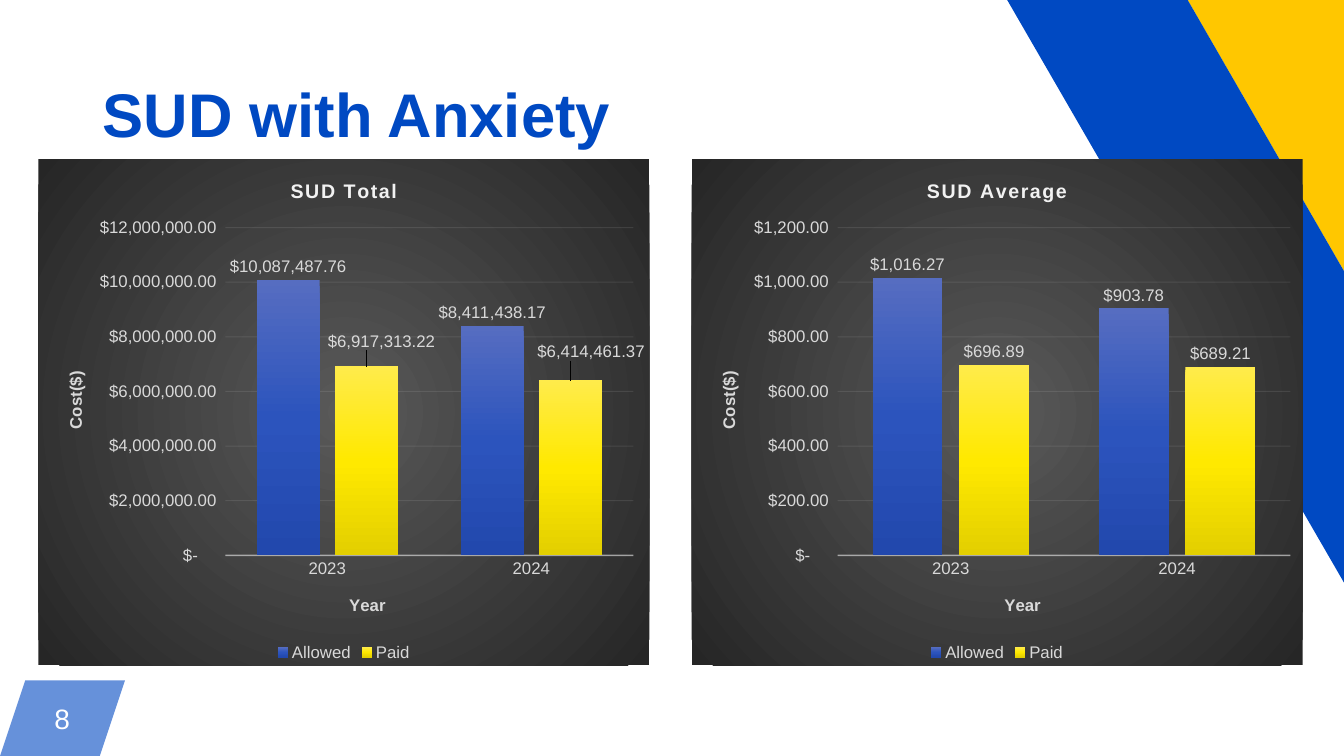
from dataclasses import dataclass

from lxml.etree import SubElement
from pptx import Presentation
from pptx.chart.data import CategoryChartData
from pptx.dml.color import RGBColor
from pptx.enum.chart import XL_CHART_TYPE as ChartKind
from pptx.enum.chart import XL_LABEL_POSITION as LabelPosition
from pptx.enum.chart import XL_LEGEND_POSITION as LegendPosition
from pptx.enum.chart import XL_TICK_MARK as TickMark
from pptx.enum.text import MSO_ANCHOR as Anchor
from pptx.enum.text import PP_ALIGN as Align
from pptx.oxml import parse_xml
from pptx.oxml.ns import nsdecls, qn
from pptx.util import Inches, Pt

WIDTH, HEIGHT = Inches(13.33), Inches(7.5)
FONT, BLUE, YELLOW, WHITE = "Arial", "0049C2", "FFC700", "FFFFFF"
PALE, GREY = "F2F2F2", "D9D9D9"
DOLLARS = '"$"#,##0.00'
ACCOUNTING = r'_("$"* #,##0.00_);_("$"* \(#,##0.00\);_("$"* "-"??_);_(@_)'
LINEAR = '<a:lin ang="5400000" scaled="0"/>'
RADIAL = ('<a:path path="circle"><a:fillToRect l="50000" t="50000" '
          'r="50000" b="50000"/></a:path>')


@dataclass(frozen=True)
class Frame:
    left: float
    top: float
    width: float
    height: float


@dataclass(frozen=True)
class Band:
    points: tuple
    color: str
    opacity: int = 100


@dataclass(frozen=True)
class Series:
    name: str
    values: tuple
    stops: tuple
    shifts: tuple = ()


@dataclass(frozen=True)
class CostChart:
    title: str
    left: float
    top_value: int
    plot: tuple
    year_left: float
    series: tuple


BLUES = ((0, "566DC1"), (50, "2C54BD"), (100, "2248AD"))
YELLOWS = ((0, "FFEB4B"), (50, "FFE900"), (100, "E3CF00"))
BANDS = (
    Band(((1.88, 90), (9.3, 90), (7.43, 100), (0, 100)), BLUE, 60),
    Band(((88.37, 0), (100, 0), (100, 35.87)), YELLOW),
    Band(((74.94, 0), (88.37, 0), (100, 35.87), (100, 77.07)), BLUE),
)
CHARTS = (
    CostChart("SUD Total", 2.85, 12_000_000, (0.306, 0.135, 0.668, 0.648), 0.504, (
        Series("Allowed", (10087487.76, 8411438.17), BLUES),
        Series("Paid", (6917313.22, 6414461.37), YELLOWS,
               ((0.025, -0.024), (0.034, -0.03))))),
    CostChart("SUD Average", 51.46, 1200, (0.239, 0.135, 0.741, 0.648), 0.507, (
        Series("Allowed", (1016.27, 903.78), BLUES),
        Series("Paid", (696.89, 689.21), YELLOWS))),
)


def across(share: float) -> int:
    return round(WIDTH * share / 100)


def down(share: float) -> int:
    return round(HEIGHT * share / 100)


def bounds(frame: Frame) -> tuple:
    return (across(frame.left), down(frame.top),
            across(frame.width), down(frame.height))


def paint(color, value: str, opacity: int = 100) -> None:
    color.rgb = RGBColor.from_string(value)
    if opacity < 100:
        for node in color._xFill.iter(qn("a:srgbClr")):
            SubElement(node, qn("a:alpha")).set("val", str(opacity * 1000))


def style(font, size: float, color: str, bold: bool = False) -> None:
    font.name, font.size, font.bold = FONT, Pt(size), bold
    paint(font.color, color)


def write(frame, text: str, *, size: float, color: str, bold: bool = False,
          align=None, spacing: int = 0) -> None:
    para = frame.paragraphs[0]
    para.alignment = align
    span = para.add_run()
    span.text = text
    style(span.font, size, color, bold)
    if spacing:
        span._r.get_or_add_rPr().set("spc", str(spacing))


def add_text(page, frame: Frame, text: str, inset: float, **form) -> None:
    box = page.shapes.add_textbox(*bounds(frame)).text_frame
    box.word_wrap, box.vertical_anchor = True, Anchor.MIDDLE
    box.margin_left = box.margin_right = Inches(inset)
    box.margin_top = box.margin_bottom = Inches(0.04)
    write(box, text, **form)


def add_band(page, band: Band) -> None:
    first, *rest = [(across(x), down(y)) for x, y in band.points]
    builder = page.shapes.build_freeform(*first)
    builder.add_line_segments(rest, close=True)
    shape = builder.convert_to_shape()
    shape.shadow.inherit = False
    shape.fill.solid()
    paint(shape.fill.fore_color, band.color, band.opacity)
    shape.line.fill.background()


def gradient(stops: tuple, direction: str) -> str:
    marks = "".join(f'<a:gs pos="{at * 1000}"><a:srgbClr val="{color}"/></a:gs>'
                    for at, color in stops)
    return (f'<a:gradFill {nsdecls("a")} rotWithShape="1"><a:gsLst>{marks}'
            f'</a:gsLst>{direction}</a:gradFill>')


def place(parent, index: int, x: float, y: float, size: tuple = (),
          edge: bool = True) -> None:
    for old in parent.findall(qn("c:layout")):
        parent.remove(old)
    layout = parse_xml(f'<c:layout {nsdecls("c")}/>')
    manual = SubElement(layout, qn("c:manualLayout"))
    entries = [("layoutTarget", "inner")] if size else []
    if edge:
        entries += [("xMode", "edge"), ("yMode", "edge")]
    entries += [("x", x), ("y", y), *zip("wh", size)]
    for tag, value in entries:
        SubElement(manual, qn(f"c:{tag}")).set("val", str(value))
    parent.insert(index, layout)


def style_axis(axis, title: str, x: float, y: float) -> None:
    axis.major_tick_mark = axis.minor_tick_mark = TickMark.NONE
    style(axis.tick_labels.font, 12, GREY)
    write(axis.axis_title.text_frame, title, size=12, color=GREY, bold=True)
    place(axis.axis_title._element, 1, x, y)


def style_line(line, width: float, opacity: int) -> None:
    line.width = Pt(width)
    line.fill.solid()
    paint(line.fill.fore_color, PALE, opacity)


def style_series(bars, series: Series) -> None:
    bars.format.line.fill.background()
    bars.format._element.spPr.insert(0, parse_xml(gradient(series.stops, LINEAR))) \
        if hasattr(bars.format._element, "spPr") else None
    labels = bars.data_labels
    labels.show_value, labels.position = True, LabelPosition.OUTSIDE_END
    labels.number_format, labels.number_format_is_linked = DOLLARS, False
    style(labels.font, 12, GREY)
    for index in range(len(series.shifts)):
        label = bars.points[index].data_label
        label.position = LabelPosition.OUTSIDE_END
        style(label.font, 12, GREY)
    for node, shift in zip(bars._element.iter(qn("c:dLbl")), series.shifts):
        place(node, 1, *shift, edge=False)


def add_cost_chart(page, cost: CostChart) -> None:
    data = CategoryChartData(number_format=DOLLARS)
    data.categories = ["2023", "2024"]
    for series in cost.series:
        data.add_series(series.name, series.values)
    frame = Frame(cost.left, 21.07, 45.46, 66.93)
    chart = page.shapes.add_chart(ChartKind.COLUMN_CLUSTERED, *bounds(frame), data).chart
    style(chart.font, 12, GREY)
    write(chart.chart_title.text_frame, cost.title, size=14, color=PALE,
          bold=True, spacing=100)
    chart.has_legend = True
    chart.legend.position, chart.legend.include_in_layout = LegendPosition.BOTTOM, False
    style(chart.legend.font, 12, GREY)
    years, costs = chart.category_axis, chart.value_axis
    style_axis(years, "Year", cost.year_left, 0.854)
    style_line(years.format.line, 1, 54)
    style_axis(costs, "Cost($)", 0.039, 0.413)
    costs.axis_title.text_frame._txBody.bodyPr.set("rot", "-5400000")
    costs.format.line.fill.background()
    style_line(costs.major_gridlines.format.line, 0.75, 10)
    costs.minimum_scale, costs.maximum_scale = 0, cost.top_value
    costs.major_unit = cost.top_value / 6
    costs.tick_labels.number_format = ACCOUNTING
    costs.tick_labels.number_format_is_linked = False
    plot = chart.plots[0]
    plot.gap_width, plot.overlap, plot.vary_by_categories = 100, -24, False
    for bars, series in zip(plot.series, cost.series):
        style_series(bars, series)
    root = chart._chartSpace
    place(root.chart.plotArea, 0, *cost.plot[:2], size=cost.plot[2:])
    backdrop = gradient(((0, "595959"), (100, "262626")), RADIAL)
    root.chart.addnext(parse_xml(f'<c:spPr {nsdecls("c", "a")}>{backdrop}'
                                 '<a:ln><a:noFill/></a:ln></c:spPr>'))


def main() -> None:
    """Build the cost comparison slide and save it."""
    deck = Presentation()
    deck.slide_width, deck.slide_height = WIDTH, HEIGHT
    page = deck.slides.add_slide(deck.slide_layouts[6])
    for band in BANDS:
        add_band(page, band)
    add_text(page, Frame(1.88, 90, 5.48, 10), "8", 0.04, size=20, color=WHITE,
             align=Align.CENTER)
    add_text(page, Frame(6.9, 5.33, 86.27, 19.33), "SUD with Anxiety", 0.1,
             size=44, color=BLUE, bold=True)
    for cost in CHARTS:
        add_cost_chart(page, cost)
    deck.save("out.pptx")


if __name__ == "__main__":
    main()
